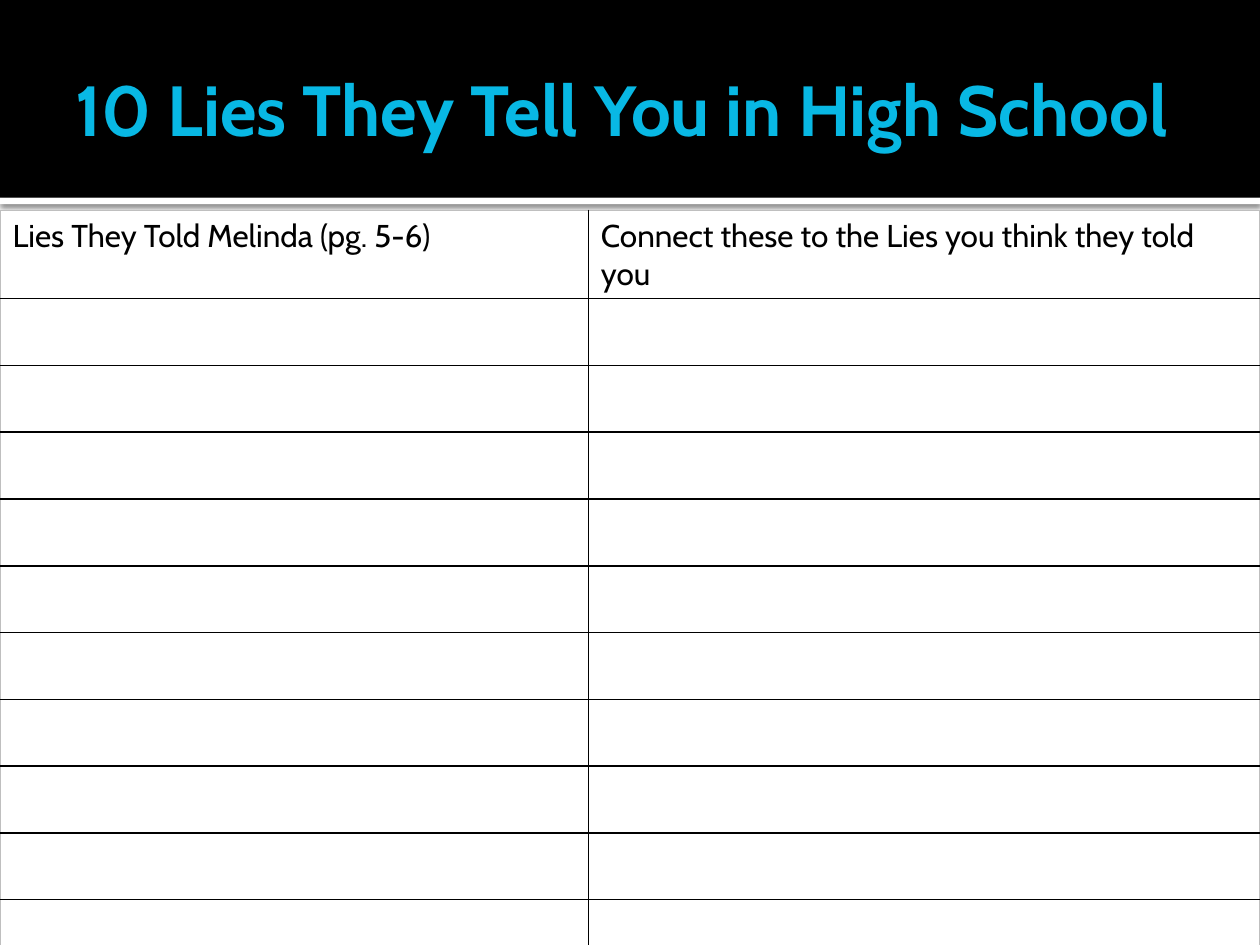
from lxml.etree import SubElement
from pptx import Presentation
from pptx.dml.color import RGBColor
from pptx.enum.shapes import MSO_SHAPE
from pptx.enum.text import MSO_ANCHOR
from pptx.oxml.ns import qn
from pptx.util import Inches, Pt

HUES = {"ink": "000000", "paper": "FFFFFF", "title": "08B8E4", "edge": "BFBFBF"}
HEADS = ["Lies They Told Melinda (pg. 5-6)",
         "Connect these to the Lies you think they told you"]
WIDTHS = [4.67, 5.33]
LIES = 10
ROW = 0.53
TOP = 1.67


def hue(name):
    return RGBColor.from_string(HUES[name])


def style(font, tone, **form):
    for key, val in {"name": "Cabin", **form}.items():
        setattr(font, key, val)
    font.color.rgb = hue(tone)


def add_band(slide, top, height, tone):
    band = slide.shapes.add_shape(MSO_SHAPE.RECTANGLE, 0, Inches(top),
                                  Inches(10), Inches(height))
    band.shadow.inherit = False
    band.fill.solid()
    band.fill.fore_color.rgb = hue(tone)
    band.line.fill.background()
    return band


def add_shade(shape):
    effects = shape._element.spPr.find(qn("a:effectLst"))
    shade = SubElement(effects, qn("a:outerShdw"), blurRad=str(Pt(2.5)),
                       dist=str(Pt(0.8)), dir="5400000", rotWithShape="0")
    color = SubElement(shade, qn("a:srgbClr"), val=HUES["ink"])
    SubElement(color, qn("a:alpha"), val="60000")


def add_title(slide, text):
    box = slide.shapes.add_textbox(Inches(0.5), Inches(0.17), Inches(9), Inches(1.37))
    frame = box.text_frame
    form = {"word_wrap": True, "vertical_anchor": MSO_ANCHOR.MIDDLE,
            "margin_left": Inches(0.1), "margin_right": Inches(0.05)}
    for key, val in form.items():
        setattr(frame, key, val)
    run = frame.paragraphs[0].add_run()
    run.text = text
    style(run.font, "title", size=Pt(40.5), bold=True)


def add_lines(cell, tones):
    props = cell._tc.get_or_add_tcPr()
    for side, tone in tones.items():
        line = SubElement(props, qn(f"a:ln{side}"), w=str(Pt(1)))
        fill = SubElement(line, qn("a:solidFill"))
        SubElement(fill, qn("a:srgbClr"), val=HUES[tone])


def add_grid(slide):
    count = LIES + 1
    grid = slide.shapes.add_table(count, len(WIDTHS), 0, Inches(TOP),
                                  Inches(sum(WIDTHS)), Inches(ROW * count)).table
    grid.first_row = grid.horz_banding = False
    for col, width in zip(grid.columns, WIDTHS):
        col.width = Inches(width)
    for r, row in enumerate(grid.rows):
        row.height = Inches(ROW)
        for c, cell in enumerate(row.cells):
            # Outer edges are pale, inner lines are black
            outer = {"L": c == 0, "R": c == len(WIDTHS) - 1,
                     "T": r == 0, "B": r == LIES}
            add_lines(cell, {s: "edge" if out else "ink" for s, out in outer.items()})
            cell.fill.background()
            if r == 0:
                cell.text = HEADS[c]
                style(cell.text_frame.paragraphs[0].runs[0].font, "ink", size=Pt(18))


def main():
    deck = Presentation()
    deck.slide_width, deck.slide_height = Inches(10), Inches(7.5)
    slide = deck.slides.add_slide(deck.slide_layouts[6])
    # Header
    add_shade(add_band(slide, 1.57, 0.05, "paper"))
    add_band(slide, 0, 1.57, "ink")
    add_title(slide, "10 Lies They Tell You in High School")
    # Worksheet
    add_grid(slide)
    deck.save("out.pptx")


if __name__ == "__main__":
    main()
